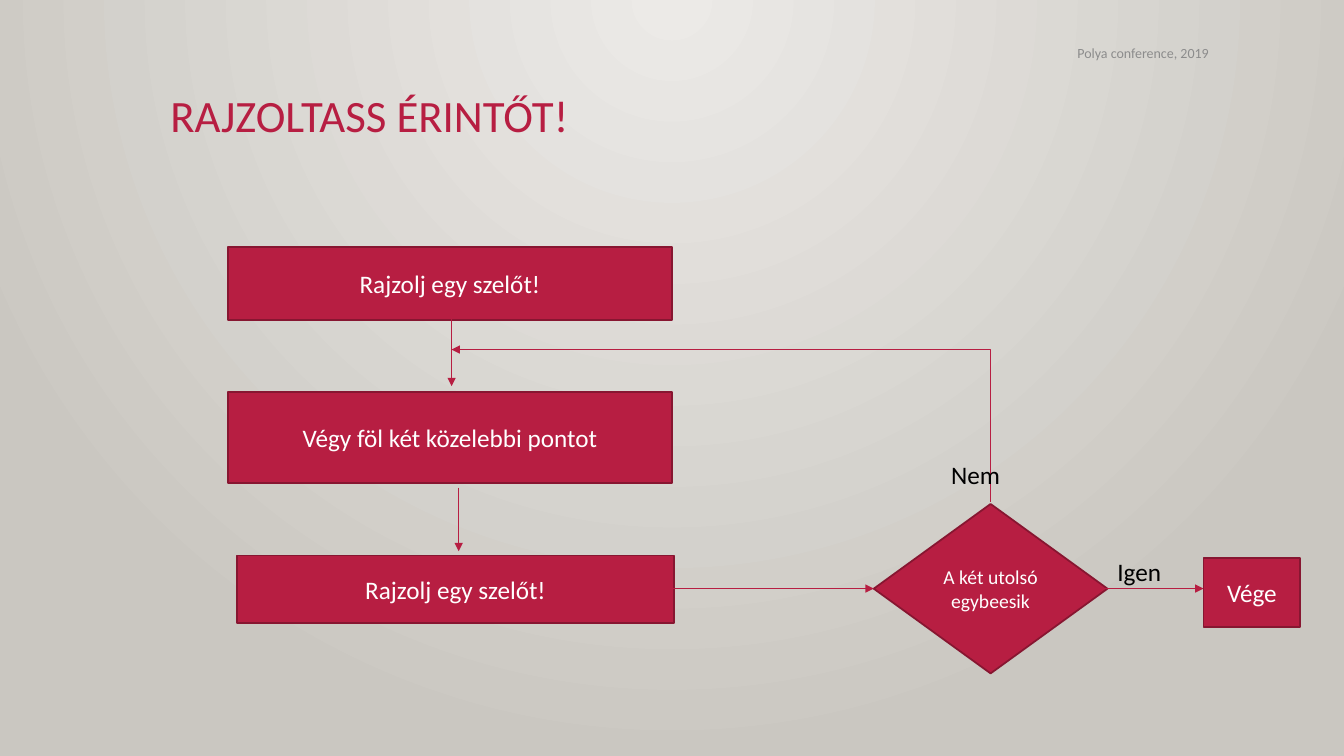
from dataclasses import dataclass

import pptx
import pptx.dml.color
import pptx.enum.shapes
import pptx.enum.text
import pptx.oxml
import pptx.oxml.ns
import pptx.shapes.connector
import pptx.slide
import pptx.text.text
import pptx.util
from pptx.util import Cm

FONT = "Calibri"
COLOURS = {
    "crimson": "B71E42",
    "outline": "871631",
    "white": "FFFFFF",
    "black": "000000",
    "grey": "8C8C8C",
    "centre": "ECEAE7",
    "edge": "CAC7C1",
}
ALIGN = pptx.enum.text.PP_ALIGN
ANCHOR = pptx.enum.text.MSO_ANCHOR
SHAPE = pptx.enum.shapes.MSO_SHAPE
CONNECTOR = pptx.enum.shapes.MSO_CONNECTOR
qn = pptx.oxml.ns.qn


@dataclass(frozen=True)
class Step:
    """A flowchart box, in centimetres."""
    text: str
    left: float
    top: float
    width: float
    height: float
    kind: SHAPE = SHAPE.FLOWCHART_PROCESS
    size: int = 18


@dataclass(frozen=True)
class Arrow:
    start: tuple[float, float]
    end: tuple[float, float]


@dataclass(frozen=True)
class Label:
    text: str
    left: float
    top: float
    width: float
    height: float
    size: int = 18
    colour: str = "black"
    align: ALIGN = ALIGN.LEFT
    anchor: ANCHOR = ANCHOR.TOP
    wrap: bool = True


STEPS = [
    Step("Rajzolj egy szelőt!", 5.74, 6.22, 11.2, 1.85),
    Step("Végy föl két közelebbi pontot", 5.74, 9.88, 11.2, 2.29),
    Step("Rajzolj egy szelőt!", 5.97, 14, 11.02, 1.7),
    Step("A két utolsó egybeesik", 22.02, 12.7, 5.89, 4.27, SHAPE.FLOWCHART_DECISION, 14),
    Step("Vége", 30.33, 14.07, 2.44, 1.73),
]
ARROWS = [
    Arrow((11.38, 7.92), (11.38, 9.73)),
    Arrow((11.56, 12.29), (11.56, 13.89)),
    Arrow((16.97, 14.83), (22.02, 14.83)),
    Arrow((27.74, 14.83), (30.33, 14.83)),
]
LOOP_BACK = Arrow((24.97, 12.65), (11.38, 8.81))
LABELS = [
    Label("Polya conference, 2019", 20.98, 0.91, 9.73, 0.86, 10, "grey",
          ALIGN.RIGHT, ANCHOR.MIDDLE),
    Label("Igen", 27.91, 13.89, 1.63, 1.02, wrap=False),
    Label("Nem", 23.72, 11.46, 1.98, 1.02),
]


def rgb(name: str) -> pptx.dml.color.RGBColor:
    return pptx.dml.color.RGBColor.from_string(COLOURS[name])


def write(frame: pptx.text.text.TextFrame, text: str, size: int, colour: str,
          align: ALIGN, anchor: ANCHOR) -> None:
    frame.text = text
    frame.vertical_anchor = anchor
    para = frame.paragraphs[0]
    para.alignment = align
    para.font.name = FONT
    para.font.size = pptx.util.Pt(size)
    para.font.color.rgb = rgb(colour)


def paint_background(slide: pptx.slide.Slide) -> None:
    """Fill the slide with a circular gradient that spreads from the top centre."""
    fill = slide.background.fill
    fill.gradient()
    for stop, position, colour in zip(fill.gradient_stops, (0, 1), ("centre", "edge")):
        stop.position = position
        stop.color.rgb = rgb(colour)
    gradient = slide.element.find(".//" + qn("a:gradFill"))
    circle = pptx.oxml.parse_xml(
        f'<a:path {pptx.oxml.ns.nsdecls("a")} path="circle">'
        '<a:fillToRect l="43000" t="0" r="43000" b="100000"/></a:path>')
    gradient.replace(gradient.find(qn("a:lin")), circle)


def add_title(slide: pptx.slide.Slide, text: str) -> None:
    title = slide.shapes.title
    title.left, title.top, title.width, title.height = map(Cm, (4.04, 2.24, 26.67, 2.92))
    write(title.text_frame, text, 32, "crimson", ALIGN.LEFT, ANCHOR.TOP)
    title.text_frame.auto_size = pptx.enum.text.MSO_AUTO_SIZE.NONE
    title.text_frame.paragraphs[0].line_spacing = 0.9


def add_step(slide: pptx.slide.Slide, step: Step) -> None:
    box = slide.shapes.add_shape(
        step.kind, Cm(step.left), Cm(step.top), Cm(step.width), Cm(step.height))
    box.shadow.inherit = False
    box.fill.solid()
    box.fill.fore_color.rgb = rgb("crimson")
    box.line.color.rgb = rgb("outline")
    box.line.width = pptx.util.Pt(1.25)
    box.text_frame.word_wrap = True
    write(box.text_frame, step.text, step.size, "white", ALIGN.CENTER, ANCHOR.MIDDLE)


def add_arrow(slide: pptx.slide.Slide, arrow: Arrow,
              kind: CONNECTOR = CONNECTOR.STRAIGHT) -> pptx.shapes.connector.Connector:
    connector = slide.shapes.add_connector(kind, *map(Cm, arrow.start + arrow.end))
    connector.line.color.rgb = rgb("crimson")
    connector.line.width = pptx.util.Pt(0.75)
    outline = connector.line._get_or_add_ln()
    pptx.oxml.ns.qn("a:tailEnd")
    outline.append(pptx.oxml.parse_xml(
        f'<a:tailEnd {pptx.oxml.ns.nsdecls("a")} type="triangle"/>'))
    connector._element.spPr.append(pptx.oxml.parse_xml(
        f'<a:effectLst {pptx.oxml.ns.nsdecls("a")}/>'))
    return connector


def add_loop_back(slide: pptx.slide.Slide, arrow: Arrow) -> None:
    """Draw a one-bend arrow that goes up first, then left."""
    (right, bottom), (left, top) = arrow.start, arrow.end
    across, rise = right - left, bottom - top
    x = (left + right - rise) / 2
    y = (top + bottom - across) / 2
    unturned = Arrow((x, y), (x + rise, y + across))
    properties = add_arrow(slide, unturned, CONNECTOR.ELBOW)._element.spPr
    properties.find(qn("a:prstGeom")).set("prst", "bentConnector2")
    frame = properties.find(qn("a:xfrm"))
    frame.set("rot", str(270 * 60000))
    frame.set("flipV", "1")


def add_label(slide: pptx.slide.Slide, label: Label) -> None:
    box = slide.shapes.add_textbox(
        Cm(label.left), Cm(label.top), Cm(label.width), Cm(label.height))
    box.text_frame.word_wrap = label.wrap
    write(box.text_frame, label.text, label.size, label.colour, label.align, label.anchor)


def main() -> None:
    deck = pptx.Presentation()
    deck.slide_width, deck.slide_height = Cm(33.87), Cm(19.05)
    slide = deck.slides.add_slide(deck.slide_layouts.get_by_name("Title Only"))
    paint_background(slide)
    add_title(slide, "RAJZOLTASS ÉRINTŐT!")
    for step in STEPS:
        add_step(slide, step)
    for arrow in ARROWS:
        add_arrow(slide, arrow)
    add_loop_back(slide, LOOP_BACK)
    for label in LABELS:
        add_label(slide, label)
    deck.save("out.pptx")


if __name__ == "__main__":
    main()
